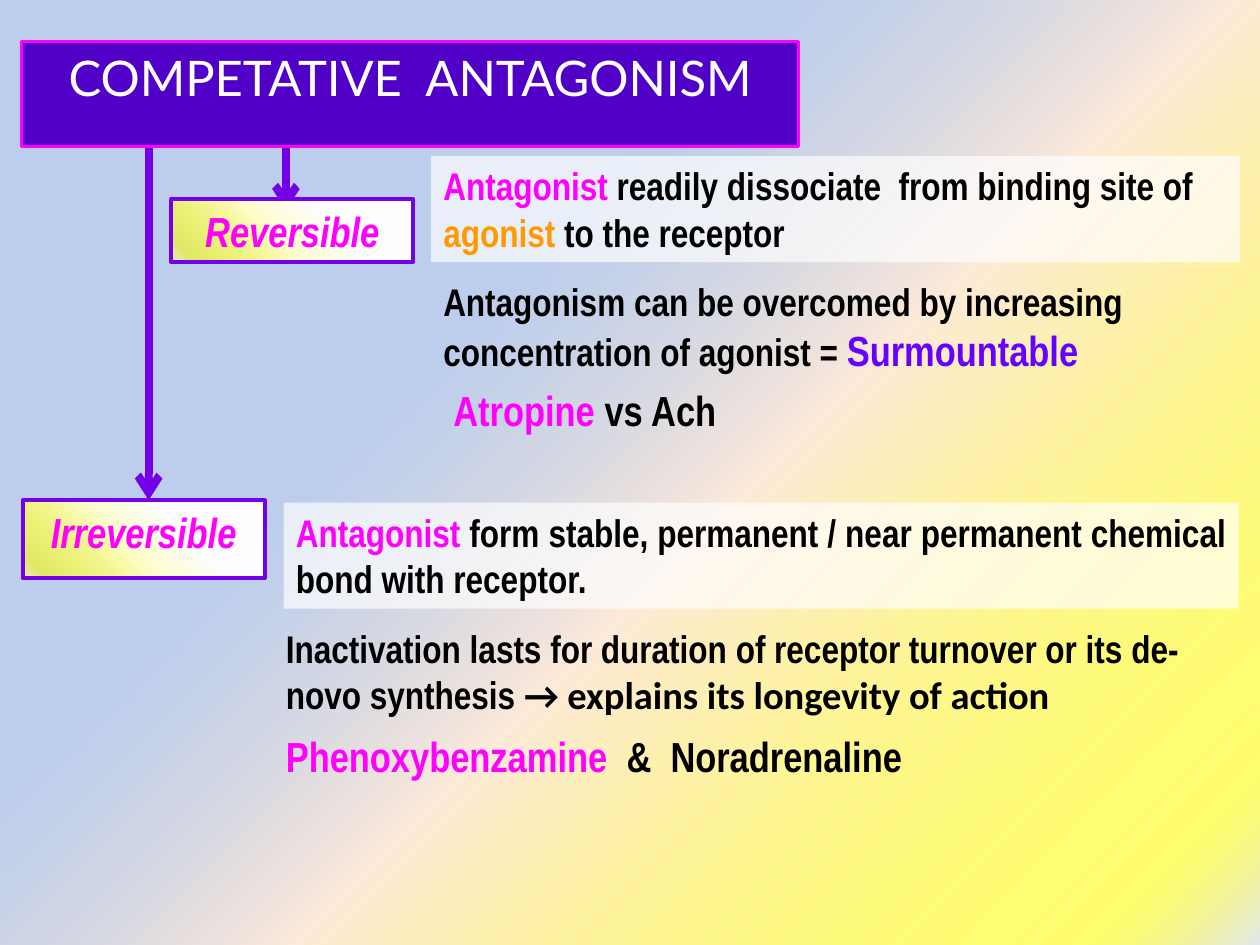
from lxml.etree import SubElement
from pptx import Presentation
from pptx.dml.color import RGBColor
from pptx.enum.shapes import MSO_CONNECTOR, MSO_SHAPE
from pptx.enum.text import MSO_ANCHOR, MSO_AUTO_SIZE, PP_ALIGN
from pptx.oxml import parse_xml
from pptx.oxml.ns import nsdecls, qn
from pptx.util import Inches, Pt

COLORS = {"black": "000000", "white": "FFFFFF", "pink": "FF00FF", "orange": "FF9900",
          "violet": "6600FF", "line": "7300E6", "title": "5100C8"}
NARROW = "Arial Narrow"
WIDTH, HEIGHT = 10, 7.5

# Gradient stops: position %, colour, opacity %
BACKDROP = [(35, "9AB5E4", 66), (56, "FDEADA", 100), (92, "FFFF00", 56), (100, "E1E8F5", 100)]
LABEL_FILL = [(35, "FFFFFF", 100), (57, "FFFFCC", 100), (92, "FFFF00", 56), (100, "E1E8F5", 100)]

# Content: spans are (text, size, colour, font)
TITLE = "COMPETATIVE  ANTAGONISM"
TITLE_BOX = (0.17, 0.33, 6.17, 0.57)
BRANCHES = [  # label, box, arrow x, arrow end y
    ("Reversible", (1.36, 1.58, 1.92, 0.5), 2.27, 1.67),
    ("Irreversible", (0.18, 3.97, 1.92, 0.62), 1.18, 3.97),
]
ARROW_TOP = 0.92
PANELS = [  # box, alignment, spans
    ((3.42, 1.24, 6.42, 0.84), PP_ALIGN.LEFT, [
        ("Antagonist", 22, "pink", NARROW),
        (" readily dissociate  from binding site of ", 22, "black", NARROW),
        ("agonist", 22, "orange", NARROW),
        (" to the receptor", 22, "black", NARROW)]),
    ((2.25, 3.99, 7.58, 0.84), PP_ALIGN.JUSTIFY, [
        ("Antagonist", 22, "pink", NARROW),
        (" form stable, permanent / near permanent chemical bond with receptor. ",
         22, "black", NARROW)]),
]
NOTES = [  # box, wraps, spans
    ((2.17, 4.91, 7.75, 0.84), True, [
        ("Inactivation lasts for duration of receptor turnover or its de- novo synthesis ",
         22, "black", NARROW),
        ("→ explains its longevity of action", 22, "black", "Calibri")]),
    ((3.42, 2.16, 6.33, 0.88), True, [
        ("Antagonism can be overcomed by increasing concentration of agonist = ",
         22, "black", NARROW),
        ("Surmountable", 24, "violet", NARROW)]),
    ((2.17, 5.75, 5.15, 0.5), False, [
        ("Phenoxybenzamine", 24, "pink", NARROW),
        ("  &  Noradrenaline", 24, "black", NARROW)]),
    ((3.5, 3, 2.39, 0.5), False, [
        ("Atropine ", 24, "pink", NARROW),
        ("vs Ach", 24, "black", NARROW)]),
]


def color(name):
    return RGBColor.from_string(COLORS[name])


def inches(box):
    return [Inches(value) for value in box]


def fill_gradient(shape, stops, angle):
    marks = "".join(
        f'<a:gs pos="{at * 1000}"><a:srgbClr val="{value}">'
        f'<a:alpha val="{opacity * 1000}"/></a:srgbClr></a:gs>'
        for at, value, opacity in stops)
    gradient = parse_xml(
        f'<a:gradFill {nsdecls("a")} rotWithShape="1"><a:gsLst>{marks}</a:gsLst>'
        f'<a:lin ang="{angle * 60000}" scaled="0"/></a:gradFill>')
    shape.element.spPr.find(qn("a:prstGeom")).addnext(gradient)


def add_rectangle(page, box):
    shape = page.shapes.add_shape(MSO_SHAPE.RECTANGLE, *inches(box))
    shape.shadow.inherit = False
    shape.line.fill.background()
    return shape


def outline(shape, name, width):
    shape.line.color.rgb = color(name)
    shape.line.width = Pt(width)


def write(shape, spans, align=PP_ALIGN.LEFT, wrap=True, bold=True, italic=False):
    frame = shape.text_frame
    frame.word_wrap = wrap
    frame.auto_size = MSO_AUTO_SIZE.SHAPE_TO_FIT_TEXT
    frame.vertical_anchor = MSO_ANCHOR.TOP
    para = frame.paragraphs[0]
    para.alignment = align
    for text, size, name, font in spans:
        span = para.add_run()
        span.text = text
        span.font.size, span.font.name = Pt(size), font
        span.font.bold, span.font.italic = bold, italic
        span.font.color.rgb = color(name)


def add_arrow(page, x, end):
    arrow = page.shapes.add_connector(
        MSO_CONNECTOR.STRAIGHT, *inches((x, ARROW_TOP, x, end)))
    outline(arrow, "line", 4.5)
    SubElement(arrow.line._get_or_add_ln(), qn("a:tailEnd"), type="arrow")
    SubElement(arrow.element.spPr, qn("a:effectLst"))


def main():
    deck = Presentation()
    deck.slide_width, deck.slide_height = Inches(WIDTH), Inches(HEIGHT)
    page = deck.slides.add_slide(deck.slide_layouts[5])

    # Backdrop
    fill_gradient(add_rectangle(page, (0, 0, WIDTH, HEIGHT)), BACKDROP, 45)

    # Arrows and branch labels
    for label, box, x, end in BRANCHES:
        add_arrow(page, x, end)
        shape = add_rectangle(page, box)
        fill_gradient(shape, LABEL_FILL, 135)
        outline(shape, "line", 2.25)
        write(shape, [(label, 24, "pink", NARROW)], PP_ALIGN.CENTER, italic=True)

    # Translucent definition panels
    for box, align, spans in PANELS:
        panel = add_rectangle(page, box)
        panel.fill.solid()
        panel.fill.fore_color.rgb = color("white")
        tint = panel.element.spPr.find(qn("a:solidFill"))[0]
        SubElement(tint, qn("a:alpha"), val="68000")
        write(panel, spans, align)

    # Notes and examples
    for box, wrap, spans in NOTES:
        write(page.shapes.add_textbox(*inches(box)), spans, wrap=wrap)

    # Title, brought in front of the backdrop
    title = page.shapes.title
    title.left, title.top, title.width, title.height = inches(TITLE_BOX)
    title.fill.solid()
    title.fill.fore_color.rgb = color("title")
    outline(title, "pink", 1.5)
    write(title, [(TITLE, 28, "white", "Lato")], PP_ALIGN.CENTER, bold=False)
    page.shapes.element.append(title.element)

    deck.save("out.pptx")


if __name__ == "__main__":
    main()
